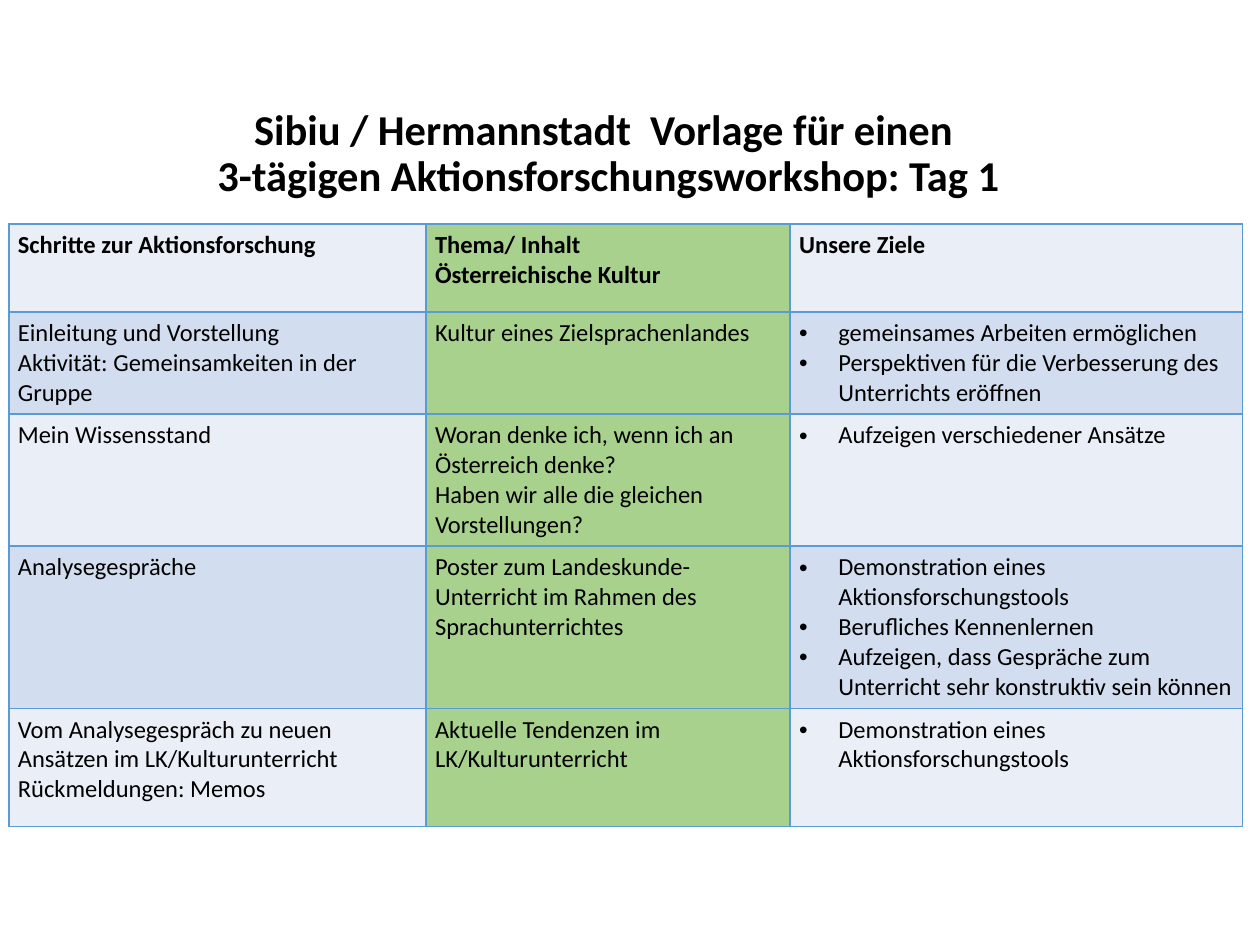
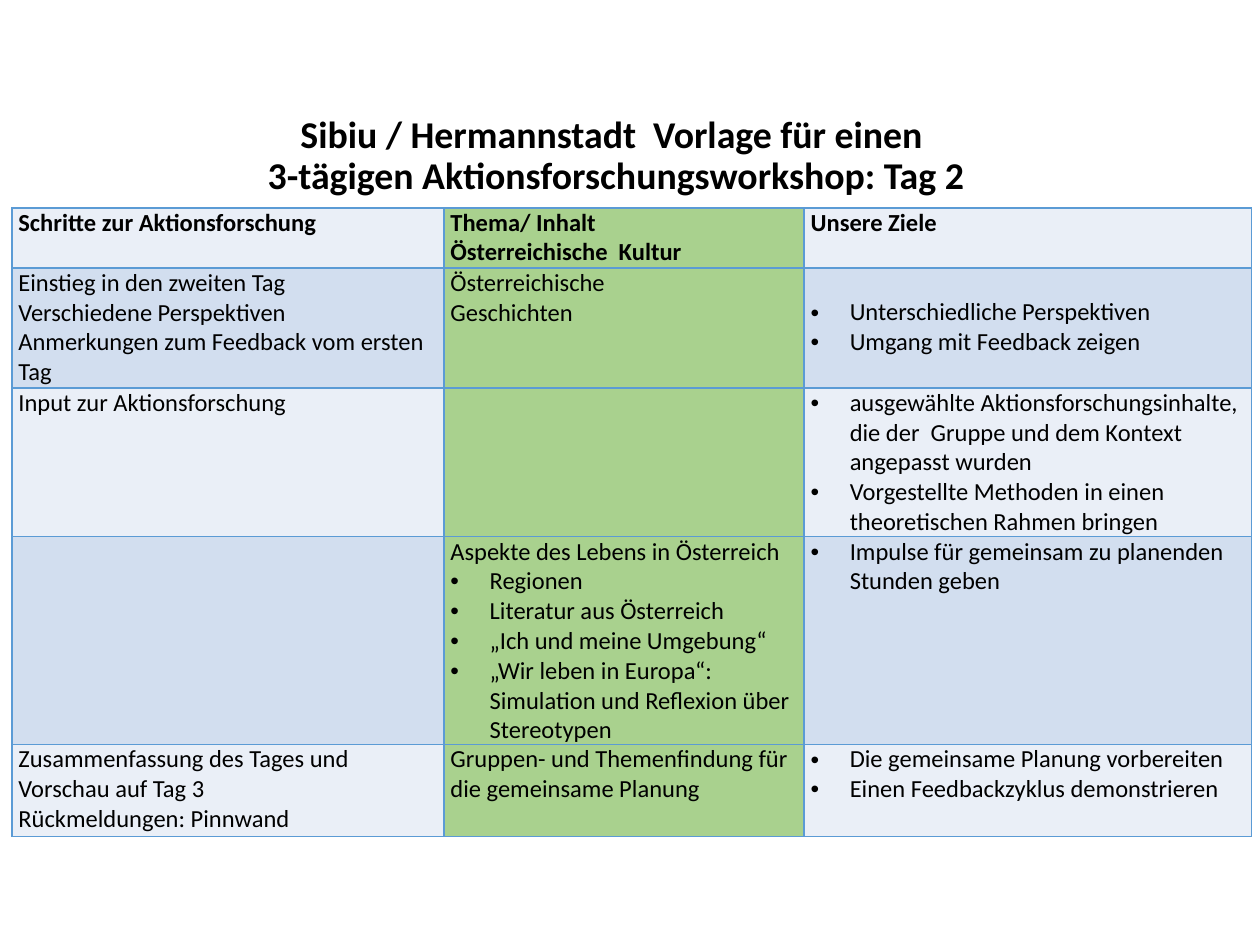
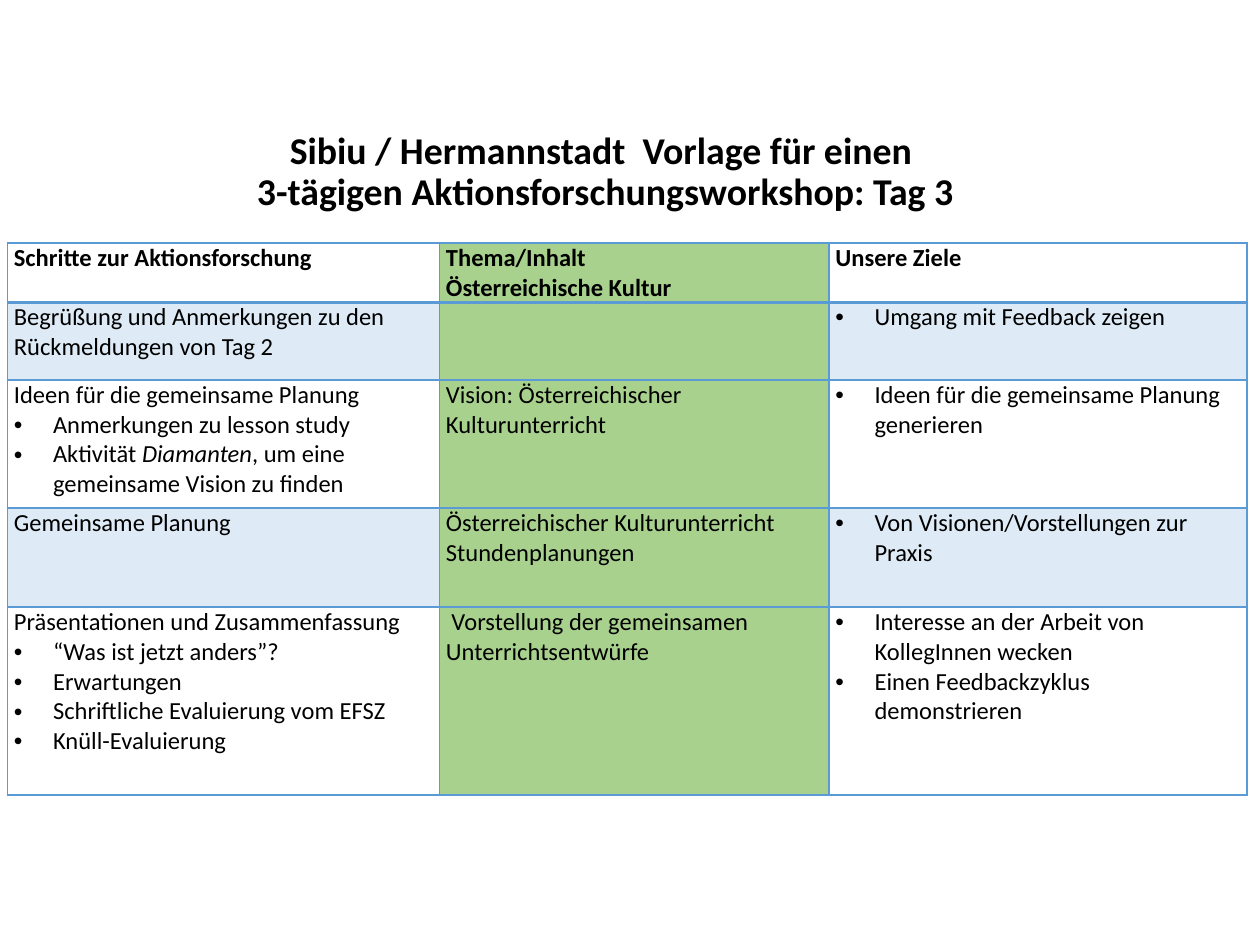
from copy import deepcopy

from lxml import etree
from pptx import Presentation
from pptx.dml.color import RGBColor
from pptx.enum.text import MSO_ANCHOR, PP_ALIGN
from pptx.oxml.ns import qn
from pptx.util import Cm, Pt

MIDDLE = MSO_ANCHOR.MIDDLE
CENTER = PP_ALIGN.CENTER

FONT = "Calibri"
BLACK = "000000"
BLUE = "5B9BD5"
GREEN = "A9D18E"
LIGHT_BAND = "EAEFF7"
DARK_BAND = "D2DEEF"
BODY_SIZE = 14
BULLET = "• "
BULLET_INDENT = 0.79
TOPIC_COLUMN = 1

# Fills of alternating rows: (colour, opacity in percent), None for no fill
SOLID_BANDS = [(LIGHT_BAND, 100), (DARK_BAND, 100)]
CLEAR_BANDS = [None, (BLUE, 20)]

# Lines starting with a bullet become list items, *text* is italic
DAYS = [
    {
        "day": 1, "title_box": (0.1, 2.12, 24.33, 2), "title_size": 24.3,
        "origin": (0.18, 4.52), "columns": [8.41, 7.34, 9.12],
        "rows": [1.77, 2.06, 2.66, 3.27, 2.38],
        "insets": (0.18, 0.13), "bands": SOLID_BANDS, "header_rule": 1,
        "steps": [
            [["Schritte zur Aktionsforschung"],
             ["Thema/ Inhalt\nÖsterreichische Kultur"],
             ["Unsere Ziele"]],
            [["Einleitung und Vorstellung",
              "Aktivität: Gemeinsamkeiten in der Gruppe"],
             ["Kultur eines Zielsprachenlandes"],
             ["• gemeinsames Arbeiten ermöglichen",
              "• Perspektiven für die Verbesserung des Unterrichts eröffnen"]],
            [["Mein Wissensstand"],
             ["Woran denke ich, wenn ich an Österreich denke?",
              "Haben wir alle die gleichen Vorstellungen?"],
             ["• Aufzeigen verschiedener Ansätze"]],
            [["Analysegespräche"],
             ["Poster zum Landeskunde-",
              "Unterricht im Rahmen des Sprachunterrichtes"],
             ["• Demonstration eines Aktionsforschungstools",
              "• Berufliches Kennenlernen",
              "• Aufzeigen, dass Gespräche zum Unterricht sehr konstruktiv sein können"]],
            [["Vom Analysegespräch zu neuen Ansätzen im LK/Kulturunterricht",
              "Rückmeldungen: Memos"],
             ["Aktuelle Tendenzen im LK/Kulturunterricht"],
             ["• Demonstration eines Aktionsforschungstools"]],
        ],
    },
    {
        "day": 2, "title_box": (0.43, 2.16, 23.98, 2), "title_size": 21.6,
        "origin": (0.24, 4.19), "columns": [8.71, 7.26, 9.02],
        "rows": [1.21, 2.42, 3, 4.19, 1.85],
        "insets": (0.13, 0), "bands": SOLID_BANDS, "header_rule": 1,
        "lowered": {(1, 2): 0.6},
        "steps": [
            [["Schritte zur Aktionsforschung"],
             ["Thema/ Inhalt\nÖsterreichische  Kultur"],
             ["Unsere Ziele"]],
            [["Einstieg in den zweiten Tag", "Verschiedene Perspektiven",
              "Anmerkungen zum Feedback vom ersten Tag"],
             ["Österreichische", "Geschichten"],
             ["• Unterschiedliche Perspektiven",
              "• Umgang mit Feedback zeigen"]],
            [["Input zur Aktionsforschung"],
             [],
             ["• ausgewählte Aktionsforschungsinhalte, die der  Gruppe und dem Kontext angepasst wurden",
              "• Vorgestellte Methoden in einen theoretischen Rahmen bringen"]],
            [[],
             ["Aspekte des Lebens in Österreich", "• Regionen",
              "• Literatur aus Österreich", "• „Ich und meine Umgebung“",
              "• „Wir leben in Europa“: Simulation und Reflexion über Stereotypen"],
             ["• Impulse für gemeinsam zu planenden Stunden geben"]],
            [["Zusammenfassung des Tages und Vorschau auf Tag 3",
              "Rückmeldungen: Pinnwand"],
             ["Gruppen- und Themenfindung für die gemeinsame Planung"],
             ["• Die gemeinsame Planung vorbereiten",
              "• Einen Feedbackzyklus demonstrieren"]],
        ],
    },
    {
        "day": 3, "title_box": (0.33, 2.49, 23.75, 2), "title_size": 21.6,
        "origin": (0.15, 4.9), "columns": [8.71, 7.85, 8.43],
        "rows": [1.19, 1.57, 2.58, 2, 3.79],
        "insets": (0.13, 0), "bands": CLEAR_BANDS, "header_rule": 2,
        "steps": [
            [["Schritte zur Aktionsforschung"],
             ["Thema/Inhalt\nÖsterreichische Kultur"],
             ["Unsere Ziele"]],
            [["Begrüßung und Anmerkungen zu den Rückmeldungen von Tag 2"],
             [],
             ["• Umgang mit Feedback zeigen"]],
            [["Ideen für die gemeinsame Planung",
              "• Anmerkungen zu lesson study",
              "• Aktivität *Diamanten*, um eine gemeinsame Vision zu finden"],
             ["Vision: Österreichischer Kulturunterricht"],
             ["• Ideen für die gemeinsame Planung generieren"]],
            [["Gemeinsame Planung"],
             ["Österreichischer Kulturunterricht", "Stundenplanungen"],
             ["• Von Visionen/Vorstellungen zur Praxis"]],
            [["Präsentationen und Zusammenfassung",
              "• “Was ist jetzt anders”?", "• Erwartungen",
              "• Schriftliche Evaluierung vom EFSZ", "• Knüll-Evaluierung"],
             [" Vorstellung der gemeinsamen Unterrichtsentwürfe"],
             ["• Interesse an der Arbeit von KollegInnen wecken",
              "• Einen Feedbackzyklus demonstrieren"]],
        ],
    },
]


def rgb(hex_colour):
    return RGBColor.from_string(hex_colour)


def set_all(target, values):
    for attribute, value in values.items():
        setattr(target, attribute, value)


def write_line(paragraph, text, size, bold):
    """Write text with line breaks and *italic* parts."""
    for line_index, line in enumerate(text.split("\n")):
        if line_index:
            paragraph.add_line_break()
        for part_index, part in enumerate(line.split("*")):
            run = paragraph.add_run()
            run.text = part
            set_all(run.font, {"name": FONT, "size": Pt(size), "bold": bold})
            if part_index % 2:
                run.font.italic = True
            run.font.color.rgb = rgb(BLACK)
    # Breaks take the format of the text around them
    for line_break in paragraph._p.findall(qn("a:br")):
        line_break.insert(0, deepcopy(run._r.rPr))


def add_bullet(paragraph):
    properties = paragraph._p.get_or_add_pPr()
    properties.set("marL", str(Cm(BULLET_INDENT)))
    properties.set("indent", str(-Cm(BULLET_INDENT)))
    etree.SubElement(properties, qn("a:buFont"), typeface="Arial")
    etree.SubElement(properties, qn("a:buChar"), char=BULLET.strip())


def draw_borders(cell, widths):
    properties = cell._tc.get_or_add_tcPr()
    for side, width in widths.items():
        border = etree.SubElement(properties, qn(f"a:ln{side}"), w=str(Pt(width)))
        fill = etree.SubElement(border, qn("a:solidFill"))
        etree.SubElement(fill, qn("a:srgbClr"), val=BLUE)


def fill_cell(cell, band):
    if band is None:
        cell.fill.background()
        return
    colour, opacity = band
    cell.fill.solid()
    cell.fill.fore_color.rgb = rgb(colour)
    if opacity < 100:
        tint = cell._tc.tcPr.find(qn("a:solidFill")).find(qn("a:srgbClr"))
        etree.SubElement(tint, qn("a:alpha"), val=str(opacity * 1000))


def write_cell(cell, lines, bold):
    frame = cell.text_frame
    for index, line in enumerate(lines):
        paragraph = frame.add_paragraph() if index else frame.paragraphs[0]
        if line.startswith(BULLET):
            add_bullet(paragraph)
        write_line(paragraph, line.removeprefix(BULLET), BODY_SIZE, bold)


def add_title(slide, box, day, size):
    frame = slide.shapes.add_textbox(*map(Cm, box)).text_frame
    set_all(frame, {"word_wrap": True, "vertical_anchor": MIDDLE})
    heading = frame.paragraphs[0]
    set_all(heading, {"alignment": CENTER, "line_spacing": 0.9})
    write_line(heading, "Sibiu / Hermannstadt  Vorlage für einen \n"
               f"3-tägigen Aktionsforschungsworkshop: Tag {day}", size, True)


def add_plan(slide, plan):
    columns, rows = plan["columns"], plan["rows"]
    box = (*plan["origin"], sum(columns), sum(rows))
    table = slide.shapes.add_table(len(rows), len(columns), *map(Cm, box)).table
    set_all(table, {"first_row": False, "horz_banding": False})
    for column, width in zip(table.columns, columns):
        column.width = Cm(width)
    for row, height in zip(table.rows, rows):
        row.height = Cm(height)

    side, edge = plan["insets"]
    rule = plan["header_rule"]
    lowered = plan.get("lowered", {})
    for r, step in enumerate(plan["steps"]):
        for c, lines in enumerate(step):
            cell = table.cell(r, c)
            top = lowered.get((r, c), edge)
            set_all(cell, {"margin_left": Cm(side), "margin_right": Cm(side),
                           "margin_top": Cm(top), "margin_bottom": Cm(edge)})
            # The header rule is shared by the first two rows
            draw_borders(cell, {"L": 1, "R": 1, "T": rule if r == 1 else 1,
                                "B": rule if r == 0 else 1})
            fill_cell(cell, (GREEN, 100) if c == TOPIC_COLUMN else plan["bands"][r % 2])
            write_cell(cell, lines, bold=r == 0)


def main():
    deck = Presentation()
    set_all(deck, {"slide_width": Cm(25.4), "slide_height": Cm(19.05)})
    blank = deck.slide_layouts[6]
    for plan in DAYS:
        slide = deck.slides.add_slide(blank)
        add_title(slide, plan["title_box"], plan["day"], plan["title_size"])
        add_plan(slide, plan)
    deck.save("out.pptx")


if __name__ == "__main__":
    main()
